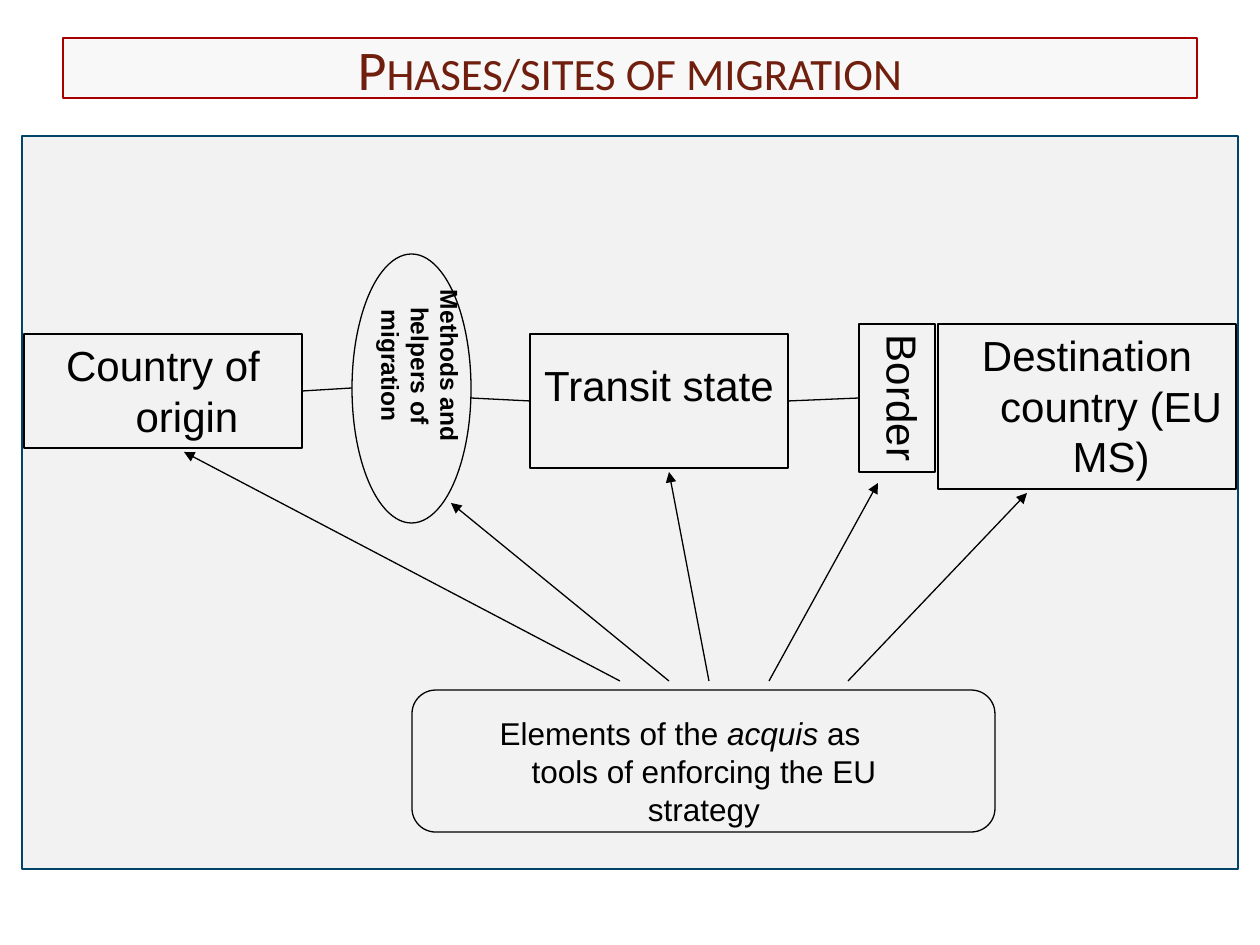
from pptx import Presentation
from pptx.dml.color import RGBColor
from pptx.enum.shapes import MSO_CONNECTOR, MSO_SHAPE as SHAPE
from pptx.enum.text import MSO_ANCHOR as ANCHOR, MSO_AUTO_SIZE as AUTO, PP_ALIGN as ALIGN
from pptx.oxml.ns import qn
from pptx.util import Emu, Pt
from lxml.etree import SubElement

SCALE = 914400 / 126
COLORS = {"panel": "F2F2F2", "panel_line": "004568", "title_line": "A80000",
          "title": "701E0E", "ink": "000000"}
TOP, LEFT, BOTTOM, RIGHT = range(4)
HANGING = 48


def px(n):
    return Emu(round(n * SCALE))


def rgb(name):
    return RGBColor.from_string(COLORS[name])


def add_box(s, box, kind=SHAPE.RECTANGLE, fill=None, line="ink", width=0.75, alpha=None):
    sp = s.shapes.add_shape(kind, *map(px, box))
    sp.shadow.inherit = False
    if fill:
        sp.fill.solid()
        sp.fill.fore_color.rgb = rgb(fill)
        if alpha:
            clr = sp.fill._xPr.find(".//" + qn("a:srgbClr"))
            SubElement(clr, qn("a:alpha")).set("val", str(alpha * 1000))
    else:
        sp.fill.background()
    sp.line.color.rgb = rgb(line)
    sp.line.width = Pt(width)
    return sp


def add_text(sp, *runs, size=24, font="Arial", color="ink", bold=False, hang=HANGING,
             pad=6, anchor=ANCHOR.TOP, vertical=False, grow=True, small_caps=False):
    """Write one centred paragraph; a run given as a tuple is italic."""
    tf = sp.text_frame
    tf.word_wrap = True
    tf.vertical_anchor = anchor
    tf.margin_top = tf.margin_bottom = px(pad)
    tf.auto_size = AUTO.SHAPE_TO_FIT_TEXT if grow else AUTO.NONE
    if vertical:
        tf._txBody.bodyPr.set("vert", "eaVert")
    p = tf.paragraphs[0]
    p.alignment = ALIGN.CENTER
    pPr = p._p.get_or_add_pPr()
    if hang:
        pPr.set("marL", str(px(hang)))
        pPr.set("indent", str(-px(hang)))
    if grow:
        before = SubElement(pPr, qn("a:spcBef"))
        SubElement(before, qn("a:spcPct")).set("val", "50000")
    for run in runs:
        r = p.add_run()
        italic = isinstance(run, tuple)
        r.text = run[0] if italic else run
        r.font.name, r.font.size = font, Pt(size)
        r.font.bold, r.font.italic = bold, italic
        r.font.color.rgb = rgb(color)
        if small_caps:
            r._r.get_or_add_rPr().set("cap", "small")


def add_line(s, start, end, arrow=False):
    """Draw a line; each end is a point or a (shape, side) pair to join."""
    joins = [e if not isinstance(e[0], int) else None for e in (start, end)]
    points = [(0, 0) if j else e for j, e in zip(joins, (start, end))]
    c = s.shapes.add_connector(MSO_CONNECTOR.STRAIGHT, *(px(v) for pt in points for v in pt))
    for join, connect in zip(joins, (c.begin_connect, c.end_connect)):
        if join:
            connect(*join)
    c.line.color.rgb = rgb("ink")
    c.line.width = Pt(0.75)
    if arrow:
        SubElement(c.line._get_or_add_ln(), qn("a:tailEnd")).set("type", "triangle")
    SubElement(c._element.spPr, qn("a:effectLst"))


def add_title(s, box):
    sp = add_box(s, box, fill="panel", line="title_line", width=1.25, alpha=50)
    add_text(sp, "Phases/sites of migration", size=32, font="Calibri", color="title",
             hang=0, anchor=ANCHOR.MIDDLE, grow=False, small_caps=True)


def add_route(s, x, y):
    """Place the stages from origin to destination and the lines between them."""
    def stage(dx, dy, w, h, text, **fmt):
        sp = add_box(s, (x + dx, y + dy, w, h))
        add_text(sp, text, **fmt)
        return sp

    origin = stage(0, 80, 278, 114, "Country of origin")
    transit = stage(506, 80, 258, 134, "Transit state", pad=42)
    stage(914, 70, 298, 165, "Destination country (EU MS)")
    border = stage(835, 70, 76, 148, "Border", vertical=True)
    add_box(s, (x + 328, y, 119, 269), SHAPE.OVAL)
    methods = s.shapes.add_textbox(*map(px, (x + 333, y + 30, 114, 228)))
    add_text(methods, "Methods and helpers of migration", size=14, bold=True, hang=0,
             vertical=True)
    add_line(s, (origin, RIGHT), (x + 328, y + 134))
    add_line(s, (methods, RIGHT), (transit, LEFT))
    add_line(s, (transit, RIGHT), (border, LEFT))


def add_tools(s, box):
    """Place the policy tools and an arrow from them to each stage above."""
    x, y, _, _ = box
    add_box(s, box, SHAPE.ROUNDED_RECTANGLE)
    label = s.shapes.add_textbox(*map(px, (x + 40, y + 18, 456, 127)))
    add_text(label, "Elements of the ", ("acquis",),
             " as tools of enforcing the EU strategy", size=18)
    arrows = [(208, -228, -238), (257, 39, -187), (297, 257, -218),
              (357, 466, -207), (436, 615, -197)]
    for start, end, rise in arrows:
        add_line(s, (x + start, y - 9), (x + end, y + rise), arrow=True)


def main():
    prs = Presentation()
    prs.slide_width, prs.slide_height = px(1260), px(945)
    s = prs.slides.add_slide(prs.slide_layouts[6])
    add_box(s, (22, 136, 1216, 733), fill="panel", line="panel_line")
    add_title(s, (63, 38, 1134, 60))
    add_route(s, 24, 254)
    add_tools(s, (412, 690, 583, 142))
    prs.save("out.pptx")


if __name__ == "__main__":
    main()
